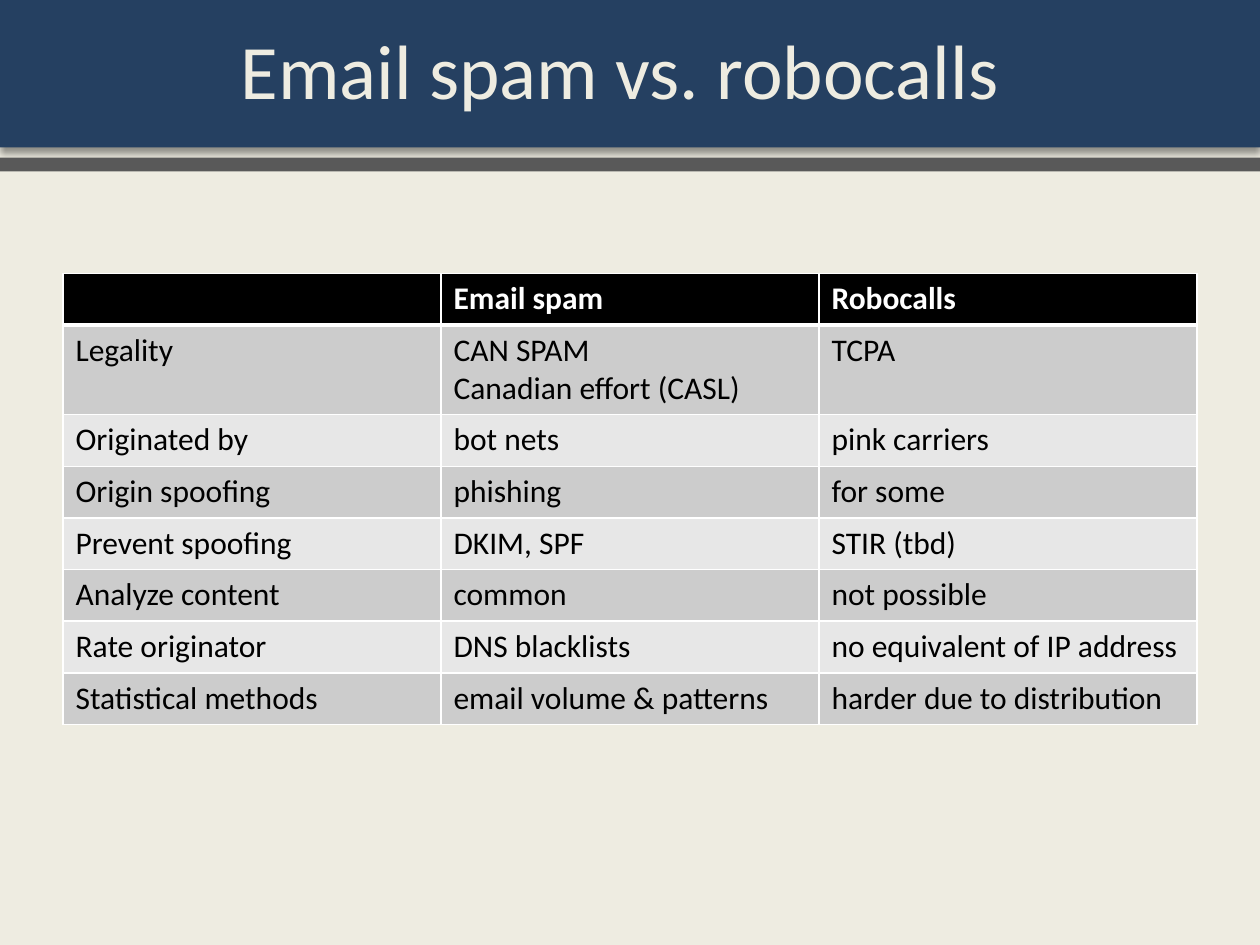
from lxml import etree
from pptx import Presentation
from pptx.dml.color import RGBColor
from pptx.enum.shapes import MSO_SHAPE
from pptx.enum.text import MSO_ANCHOR, PP_ALIGN
from pptx.oxml import parse_xml
from pptx.oxml.ns import nsdecls, qn
from pptx.util import Inches, Pt

RECTANGLE = MSO_SHAPE.RECTANGLE
MIDDLE = MSO_ANCHOR.MIDDLE
CENTER = PP_ALIGN.CENTER

CREAM = RGBColor(0xEE, 0xEC, 0xE1)
NAVY = RGBColor(0x25, 0x40, 0x61)
SLATE = RGBColor(0x59, 0x59, 0x59)
BLACK = RGBColor(0x00, 0x00, 0x00)
WHITE = RGBColor(0xFF, 0xFF, 0xFF)
DARK_BAND = RGBColor(0xCC, 0xCC, 0xCC)
LIGHT_BAND = RGBColor(0xE7, 0xE7, 0xE7)

WIDTH, HEIGHT = 10, 7.5
HEADER_BOX = (0, -0.08, WIDTH, 1.25)
RULE_BOX = (0, 1.25, WIDTH, 0.11)
TITLE_BOX = (0.42, -0.08, 9, 1.25)
TABLE_BOX = (0.5, 2.17, 9, 3.28)
THIN, THICK = 1, 3

TITLE_FORMAT = {"name": "Calibri", "size": Pt(44), "bold": False}
HEAD_FORMAT = {"name": "Calibri", "size": Pt(18), "bold": True}
BODY_FORMAT = {"name": "Calibri", "size": Pt(18), "bold": False}

ROWS = [
    ("", "Email spam", "Robocalls"),
    ("Legality", "CAN SPAM\nCanadian effort (CASL)", "TCPA"),
    ("Originated by", "bot nets", "pink carriers"),
    ("Origin spoofing", "phishing", "for some"),
    ("Prevent spoofing", "DKIM, SPF", "STIR (tbd)"),
    ("Analyze content", "common", "not possible"),
    ("Rate originator", "DNS blacklists", "no equivalent of IP address"),
    ("Statistical methods", "email volume & patterns", "harder due to distribution"),
]


def to_inches(box):
    return [Inches(length) for length in box]


def format_font(font, values, colour):
    for name, value in values.items():
        setattr(font, name, value)
    font.color.rgb = colour


def add_bar(page, box, colour):
    bar = page.shapes.add_shape(RECTANGLE, *to_inches(box))
    bar.shadow.inherit = False
    bar.fill.solid()
    bar.fill.fore_color.rgb = colour
    bar.line.fill.background()
    return bar


def add_shadow(shape):
    effects = shape._element.spPr.find(qn("a:effectLst"))
    effects.append(parse_xml(
        f'<a:outerShdw {nsdecls("a")} blurRad="{Pt(4)}" dist="{Pt(3)}" dir="5400000" '
        'algn="t" rotWithShape="0"><a:srgbClr val="000000"><a:alpha val="40000"/>'
        '</a:srgbClr></a:outerShdw>'))


def place_title(page, box, text):
    title = page.shapes.title
    title.left, title.top, title.width, title.height = to_inches(box)
    page.shapes._spTree.append(title._element)
    title.text = text
    title.text_frame.vertical_anchor = MIDDLE
    para = title.text_frame.paragraphs[0]
    para.alignment = CENTER
    format_font(para.runs[0].font, TITLE_FORMAT, CREAM)


def add_borders(cell, widths):
    properties = cell._tc.get_or_add_tcPr()
    for side, width in widths.items():
        line = etree.SubElement(properties, qn(f"a:ln{side}"), w=str(Pt(width)))
        fill = etree.SubElement(line, qn("a:solidFill"))
        etree.SubElement(fill, qn("a:srgbClr"), val=str(WHITE))


def fill_cell(cell, text, row):
    is_head = row == 0
    add_borders(cell, {"L": THIN, "R": THIN,
                       "T": THICK if row == 1 else THIN,
                       "B": THICK if is_head else THIN})
    cell.fill.solid()
    band = DARK_BAND if row % 2 else LIGHT_BAND
    cell.fill.fore_color.rgb = BLACK if is_head else band
    cell.text = text
    for para in cell.text_frame.paragraphs:
        format_font(para.font, HEAD_FORMAT if is_head else BODY_FORMAT,
                    WHITE if is_head else BLACK)
        for span in para.runs:
            format_font(span.font, HEAD_FORMAT if is_head else BODY_FORMAT,
                        WHITE if is_head else BLACK)


def add_comparison(page, box, rows):
    frame = page.shapes.add_table(len(rows), len(rows[0]), *to_inches(box))
    for row, texts in enumerate(rows):
        for column, text in enumerate(texts):
            fill_cell(frame.table.cell(row, column), text, row)


def main():
    deck = Presentation()
    deck.slide_width, deck.slide_height = Inches(WIDTH), Inches(HEIGHT)
    page = deck.slides.add_slide(deck.slide_layouts[5])
    page.background.fill.solid()
    page.background.fill.fore_color.rgb = CREAM
    add_shadow(add_bar(page, HEADER_BOX, NAVY))
    add_bar(page, RULE_BOX, SLATE)
    place_title(page, TITLE_BOX, "Email spam vs. robocalls")
    add_comparison(page, TABLE_BOX, ROWS)
    deck.save("out.pptx")


if __name__ == "__main__":
    main()
